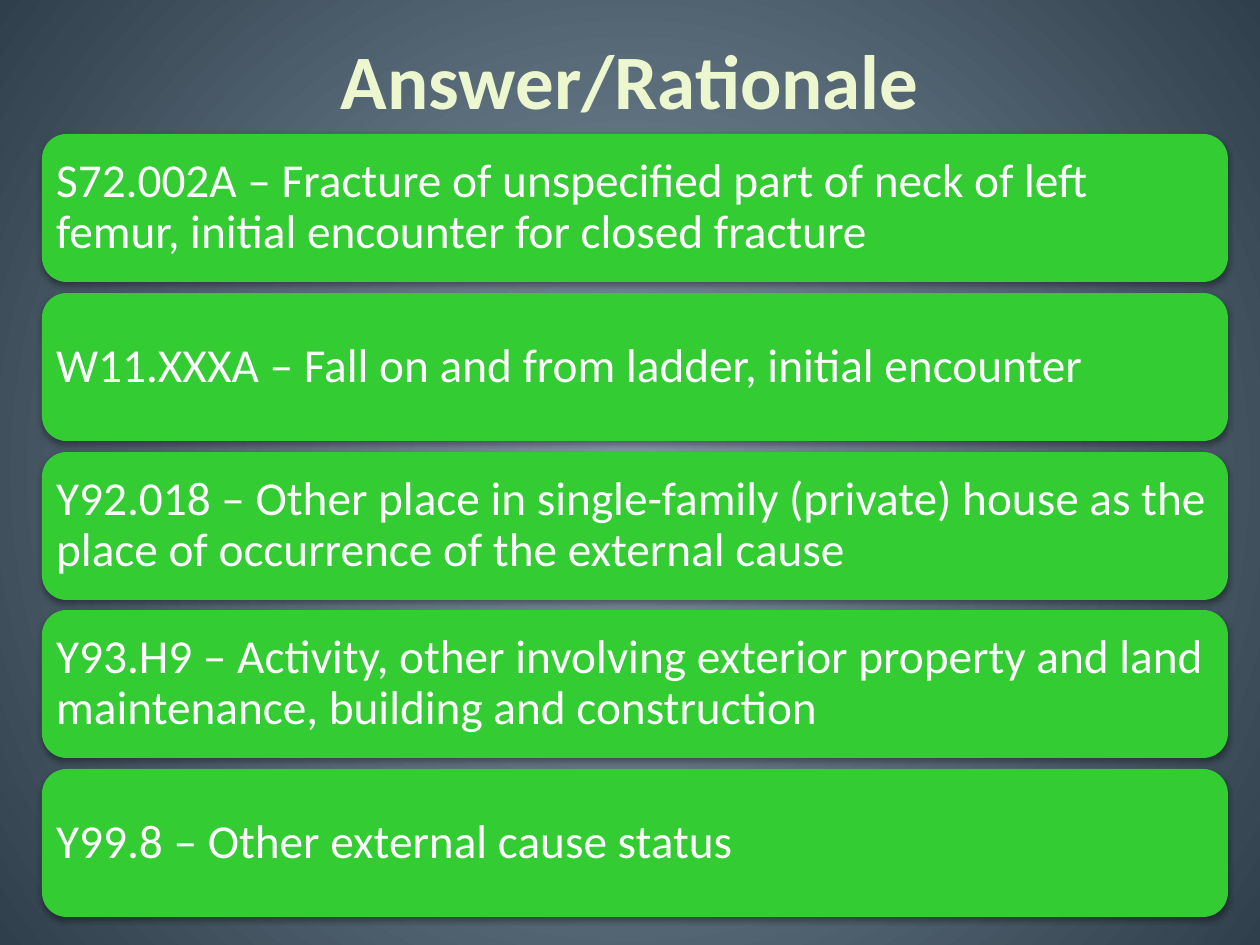
"""Build the Answer/Rationale slide of stacked diagnosis code cards."""
from dataclasses import dataclass

from lxml.etree import SubElement
from pptx import Presentation
from pptx.dml.color import RGBColor as Rgb
from pptx.enum.shapes import MSO_SHAPE as Preset
from pptx.enum.text import MSO_ANCHOR as Anchor, PP_ALIGN as Align
from pptx.oxml.ns import qn
from pptx.shapes.autoshape import Shape
from pptx.slide import Slide
from pptx.util import Emu, Pt

PX_PER_INCH = 126


@dataclass(frozen=True)
class Theme:
    font: str = "Calibri"
    title_size: int = 44
    card_size: int = 27
    title: str = "ECF7D0"
    card: str = "33CC33"
    card_text: str = "FFFFFF"
    shadow: str = "000000"
    glow: str = "8699A9"
    edge: str = "2F3F4B"


@dataclass(frozen=True)
class Box:
    left: int
    top: int
    width: int
    height: int

    def emu(self) -> tuple[Emu, ...]:
        return tuple(px(n) for n in (self.left, self.top, self.width, self.height))


@dataclass(frozen=True)
class Code:
    code: str
    meaning: str


THEME = Theme()
TITLE_BOX = Box(63, 0, 1134, 158)
STACK = Box(42, 134, 1186, 783)
CARD_HEIGHT = 148
CARD_INSET = 7
CODES = (
    Code("S72.002A", "Fracture of unspecified part of neck of left femur, "
         "initial encounter for closed fracture"),
    Code("W11.XXXA", "Fall on and from ladder, initial encounter"),
    Code("Y92.018", "Other place in single-family (private) house as the "
         "place of occurrence of the external cause"),
    Code("Y93.H9", "Activity, other involving exterior property and land "
         "maintenance, building and construction"),
    Code("Y99.8", "Other external cause status"),
)


def px(length: int) -> Emu:
    return Emu(round(length * 914400 / PX_PER_INCH))


def paint_background(page: Slide) -> None:
    fill = page.background.fill
    fill.gradient()
    for stop, color in zip(fill.gradient_stops, (THEME.glow, THEME.edge)):
        stop.color.rgb = Rgb.from_string(color)
    gradient = next(page.element.iter(qn("a:gradFill")))
    gradient.remove(gradient.find(qn("a:lin")))
    circle = SubElement(gradient, qn("a:path"), path="circle")
    SubElement(circle, qn("a:fillToRect"), l="50000", t="50000", r="50000", b="50000")


def write(shape: Shape, text: str, size: int, color: str, align: Align, bold: bool = False) -> None:
    frame = shape.text_frame
    frame.text = text
    frame.word_wrap = True
    frame.vertical_anchor = Anchor.MIDDLE
    para = frame.paragraphs[0]
    para.alignment = align
    font = para.runs[0].font
    font.name, font.size, font.bold = THEME.font, Pt(size), bold
    font.color.rgb = Rgb.from_string(color)


def add_shadow(shape: Shape) -> None:
    shape.shadow.inherit = False
    effects = shape.element.spPr.find(qn("a:effectLst"))
    shadow = SubElement(effects, qn("a:outerShdw"), blurRad=str(Pt(3.1)),
                        dist=str(Pt(1.8)), dir="5400000", rotWithShape="0")
    color = SubElement(shadow, qn("a:srgbClr"), val=THEME.shadow)
    SubElement(color, qn("a:alpha"), val="35000")


def add_card(page: Slide, code: Code, box: Box) -> None:
    card = page.shapes.add_shape(Preset.ROUNDED_RECTANGLE, *box.emu())
    card.fill.solid()
    card.fill.fore_color.rgb = Rgb.from_string(THEME.card)
    card.line.fill.background()
    add_shadow(card)
    write(card, f"{code.code} – {code.meaning}", THEME.card_size, THEME.card_text, Align.LEFT)
    card.text_frame.paragraphs[0].line_spacing = 0.9
    card.text_frame.margin_left = card.text_frame.margin_right = px(CARD_INSET)
    card.text_frame.margin_top = card.text_frame.margin_bottom = px(CARD_INSET)


def main() -> None:
    deck = Presentation()
    deck.slide_width, deck.slide_height = px(1260), px(945)
    page = deck.slides.add_slide(deck.slide_layouts[6])
    paint_background(page)
    pitch = (STACK.height - CARD_HEIGHT) / (len(CODES) - 1)
    for index, code in enumerate(CODES):
        top = STACK.top + round(index * pitch)
        add_card(page, code, Box(STACK.left, top, STACK.width, CARD_HEIGHT))
    title = page.shapes.add_textbox(*TITLE_BOX.emu())
    write(title, "Answer/Rationale", THEME.title_size, THEME.title, Align.CENTER, bold=True)
    deck.save("out.pptx")


if __name__ == "__main__":
    main()
